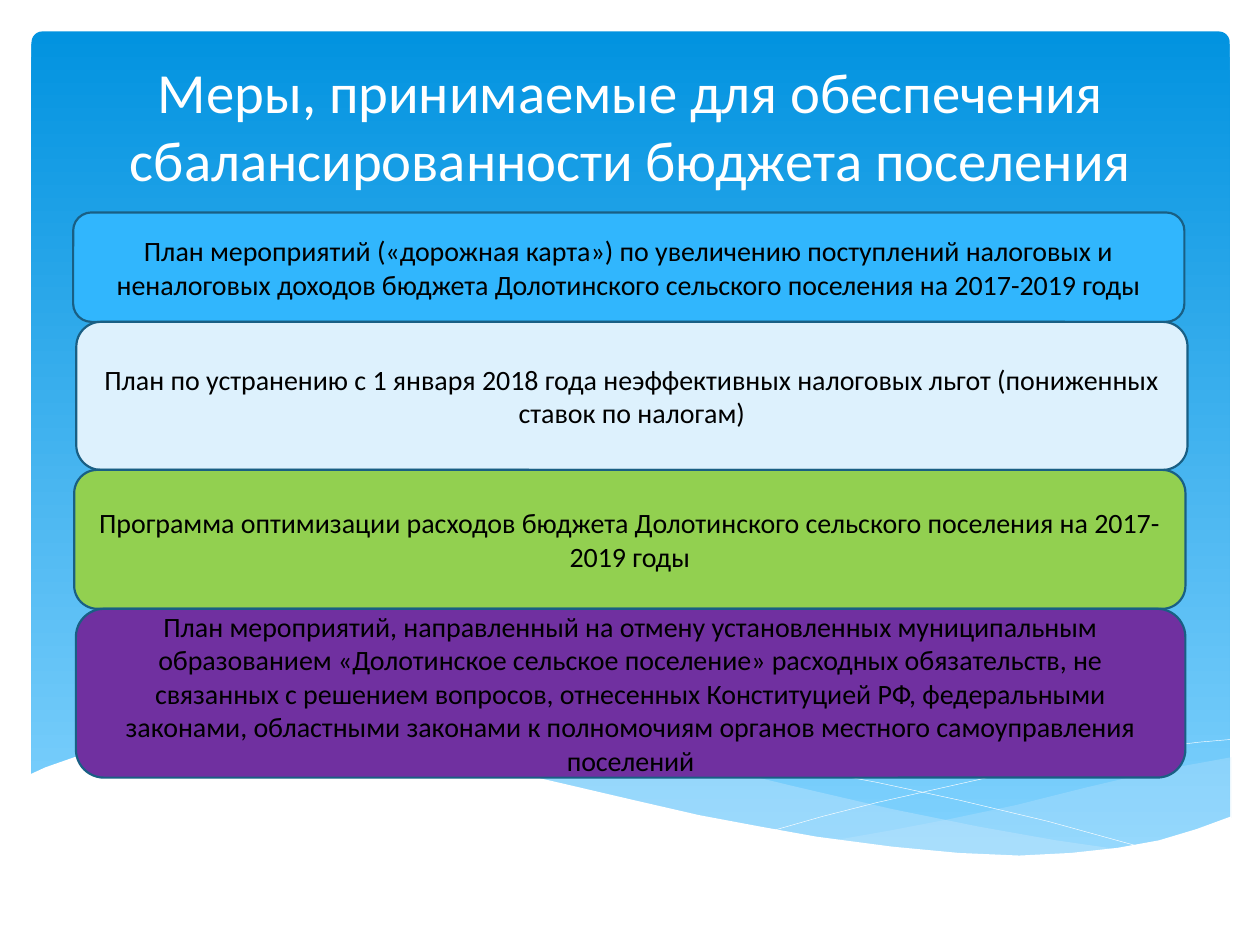
from lxml.etree import SubElement
from pptx import Presentation
from pptx.dml.color import RGBColor
from pptx.enum.shapes import MSO_SHAPE as Shape
from pptx.enum.text import MSO_ANCHOR as Anchor, MSO_AUTO_SIZE as AutoSize, PP_ALIGN as Align
from pptx.oxml.ns import qn
from pptx.util import Pt

FONT = "Calibri"
COLORS = {
    "sky_top": "0293E0", "sky_bottom": "83D3FE", "ribbon": "C6E7FC",
    "white": "FFFFFF", "text": "000000", "outline": "195F84",
    "blue": "31B6FD", "pale": "DDF1FD", "green": "92D050", "purple": "7030A0",
}

# Wave outlines in points, measured from the top left of the wave band
RIGHT_RIBBON = [
    (687, 10.8), (667.4, 14.4), (647.3, 18), (625.7, 23), (604.1, 28.1),
    (563.8, 38.2), (526.3, 46.1), (492.5, 52.6), (460.1, 58.3), (481.7, 61.2),
    (511.2, 64.8), (537.8, 67), (570.2, 67.7), (599, 66.2), (624.2, 63.4),
    (647.3, 58.3), (668.2, 52.6), (687, 45.4)]
LEFT_RIBBON = [
    (627.1, 64.1), (586.8, 58.3), (542.2, 50.4), (492.5, 40.3), (437, 27.4),
    (403.9, 19.4), (373.7, 13), (344.9, 8.6), (301.7, 3.6), (271.4, 1.4),
    (244.1, 0.7), (219.6, 2.2), (190.1, 5), (230.4, 10.8), (275, 19.4),
    (307.4, 27.4), (365, 40.3), (416.9, 51.1), (463, 59), (504, 64.8),
    (540.7, 67), (573.1, 67.7), (601.9, 67)]
FALLING_LINE = [
    (206.6, 7.9), (231.1, 4.3), (262.8, 2.2), (308.2, 2.2), (351.4, 5.8),
    (402.5, 11.5), (442.1, 17.3), (484.6, 25.2), (531.4, 35.3), (582.5, 47.5),
    (637.2, 62.6)]
RISING_LINE = [
    (425.5, 52.6), (453.6, 44.6), (484.6, 36.7), (522.7, 28.1), (564.5, 18.7),
    (607.7, 10.1), (639.4, 5.8), (668.9, 2.2), (686.2, 0.7)]
WHITE_WAVE = [
    (687, 44.6), (667.4, 51.8), (645.8, 58.3), (622, 62.6), (595.4, 65.5),
    (565.9, 67), (531.4, 65.5), (493.2, 61.9), (450, 56.2), (417.6, 50.4),
    (383, 43.9), (345.6, 35.3), (305.3, 25.9), (265, 16.6), (228.2, 9.4),
    (193.7, 4.3), (163.4, 1.4), (135.4, 0), (99.4, 0), (69.1, 2.2),
    (44.6, 6.5), (25.9, 10.8), (9.4, 16.6), (0, 20.9), (0, 104.4), (687, 104.4)]

# Left, top, width, height, fill, text
MEASURES = [
    (0, 0, 635, 62.5, "blue",
     "План мероприятий («дорожная карта») по увеличению поступлений налоговых и "
     "неналоговых доходов бюджета Долотинского сельского поселения на 2017-2019 годы"),
    (1.8, 62.5, 635, 84.6, "pale",
     "План по устранению с 1 января 2018 года неэффективных налоговых льгот "
     "(пониженных ставок по налогам)"),
    (0.6, 147.1, 635, 79.4, "green",
     "Программа оптимизации расходов бюджета Долотинского сельского поселения "
     "на 2017-2019 годы"),
    (1.6, 226.5, 634, 96.5, "purple",
     "План мероприятий, направленный на отмену установленных муниципальным "
     "образованием «Долотинское сельское поселение» расходных обязательств, не "
     "связанных с решением вопросов, отнесенных Конституцией РФ, федеральными "
     "законами, областными законами к полномочиям органов местного самоуправления "
     "поселений"),
]


def rgb(name):
    return RGBColor.from_string(COLORS[name])


def write(shape, text, size, color, anchor):
    frame = shape.text_frame
    frame.word_wrap = True
    frame.auto_size = AutoSize.NONE
    frame.vertical_anchor = anchor
    para = frame.paragraphs[0]
    para.alignment = Align.CENTER
    span = para.add_run()
    span.text = text
    span.font.name, span.font.size = FONT, Pt(size)
    span.font.color.rgb = rgb(color)


def add_outline(page, left, top, points, fill=None, opacity=100):
    """Draw a filled area, or a thin white line when no fill is given."""
    first, *rest = [(Pt(left + x), Pt(top + y)) for x, y in points]
    builder = page.shapes.build_freeform(*first, scale=1.0)
    builder.add_line_segments(rest, close=fill is not None)
    shape = builder.convert_to_shape()
    shape.shadow.inherit = False
    if fill is None:
        shape.fill.background()
        shape.line.color.rgb = rgb("white")
        shape.line.width = Pt(0.25)
        return
    shape.line.fill.background()
    shape.fill.solid()
    shape.fill.fore_color.rgb = rgb(fill)
    if opacity < 100:
        color = shape.element.spPr.find(qn("a:solidFill"))[0]
        SubElement(color, qn("a:alpha"), val=str(opacity * 1000))


def add_sky(page, left, top, width, height):
    sky = page.shapes.add_shape(
        Shape.ROUNDED_RECTANGLE, Pt(left), Pt(top), Pt(width), Pt(height))
    sky.adjustments[0] = 0.013
    sky.shadow.inherit = False
    sky.line.fill.background()
    sky.fill.gradient()
    sky.fill.gradient_angle = 270
    for stop, name, position in zip(
            sky.fill.gradient_stops, ("sky_top", "sky_bottom"), (0, 1)):
        stop.color.rgb = rgb(name)
        stop.position = position


def add_waves(page, left, top):
    add_outline(page, left, top, RIGHT_RIBBON, "ribbon", 29)
    add_outline(page, left, top, LEFT_RIBBON, "ribbon", 40)
    add_outline(page, left, top, FALLING_LINE)
    add_outline(page, left, top, RISING_LINE)
    add_outline(page, left, top, WHITE_WAVE, "white")


def place_title(page, left, top, width, height):
    title = page.shapes.title
    page.shapes.element.append(title.element)  # bring in front of the backdrop
    title.left, title.top = Pt(left), Pt(top)
    title.width, title.height = Pt(width), Pt(height)
    write(title, "Меры, принимаемые для обеспечения сбалансированности бюджета поселения",
          32.4, "white", Anchor.BOTTOM)


def add_measures(page, left, top):
    for x, y, width, height, fill, text in MEASURES:
        box = page.shapes.add_shape(
            Shape.ROUNDED_RECTANGLE, Pt(left + x), Pt(top + y), Pt(width), Pt(height))
        box.shadow.inherit = False
        box.fill.solid()
        box.fill.fore_color.rgb = rgb(fill)
        box.line.color.rgb = rgb("outline")
        box.line.width = Pt(1.25)
        write(box, text, 16, "text", Anchor.MIDDLE)


def main():
    deck = Presentation()
    deck.slide_width, deck.slide_height = Pt(720), Pt(540)
    page = deck.slides.add_slide(deck.slide_layouts[5])

    # Backdrop
    add_sky(page, 18, 18, 684.7, 475.2)
    add_waves(page, 16.56, 421.9)

    # Content
    place_title(page, 20.2, 20.9, 680.4, 92.9)
    add_measures(page, 41.8, 121.4)
    deck.save("out.pptx")


if __name__ == "__main__":
    main()
